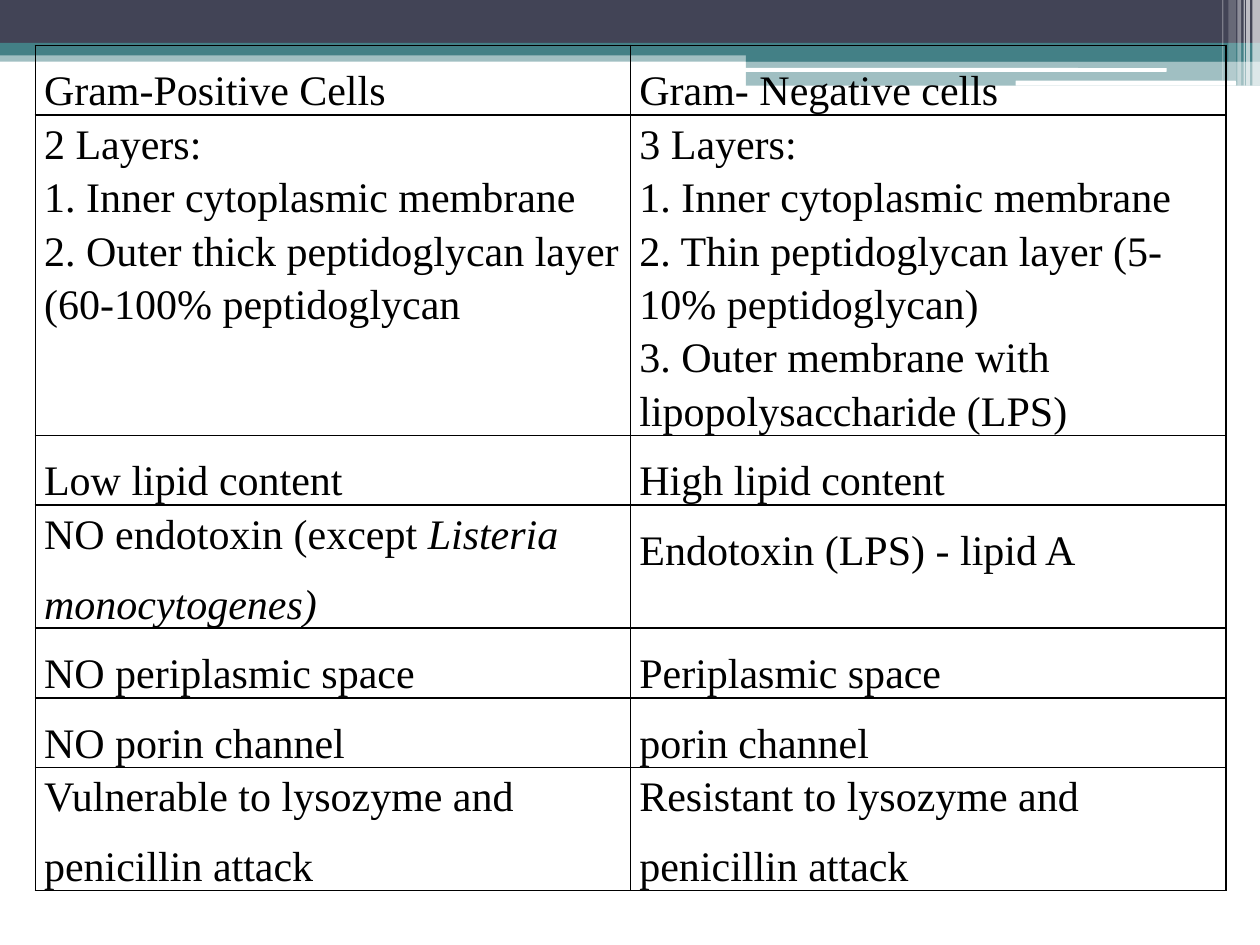
from dataclasses import dataclass

from lxml import etree
from pptx import Presentation
from pptx.dml.color import RGBColor
from pptx.enum.shapes import MSO_SHAPE
from pptx.enum.text import PP_ALIGN
from pptx.oxml.ns import qn
from pptx.util import Inches, Pt

RECTANGLE = MSO_SHAPE.RECTANGLE
ROUNDED = MSO_SHAPE.ROUNDED_RECTANGLE
JUSTIFY = PP_ALIGN.JUSTIFY


@dataclass(frozen=True)
class Theme:
    navy: str = "424456"
    teal: str = "438086"
    white: str = "FFFFFF"
    ink: str = "000000"
    font: str = "Times New Roman"
    text_size: int = 24
    border_width: int = 1
    tight: float = 1.15
    loose: float = 1.5


THEME = Theme()

BANDS = [
    (0, 0.4, 10, 0.09, THEME.teal, 50),
    (0, 0, 10, 0.34, THEME.navy, 100),
    (0, 0.34, 10, 0.1, THEME.teal, 100),
    (5.92, 0.39, 4.08, 0.1, THEME.teal, 100),
    (5.92, 0.48, 4.08, 0.2, THEME.teal, 50),
]
HIGHLIGHTS = [(5.91, 0.54, 3.35, 0.03), (8.06, 0.64, 1.75, 0.04)]
STRIPES = [
    (9.94, 0.06, 0.68, 65),
    (9.89, 0.03, 0.68, 65),
    (9.87, 0.01, 0.68, 60),
    (9.82, 0.03, 0.68, 40),
    (9.75, 0.06, 0.64, 20),
    (9.7, 0.01, 0.64, 30),
]

ROW_HEIGHTS = [0.47, 1.44, 0.47, 0.83, 0.47, 0.47, 0.83]
# Each cell holds its tight lines, then its loose last line; asterisks switch italics.
ROWS = [
    [([], "Gram-Positive Cells"), ([], "Gram- Negative cells ")],
    [
        (["2 Layers:", "1. Inner cytoplasmic membrane",
          "2. Outer thick peptidoglycan layer (60-100% peptidoglycan"], None),
        (["3 Layers:", "1. Inner cytoplasmic membrane",
          "2. Thin peptidoglycan layer (5- 10% peptidoglycan)",
          "3. Outer membrane with lipopolysaccharide (LPS)"], None),
    ],
    [([], "Low lipid content"), ([], "High lipid content")],
    [
        (["NO endotoxin (except *Listeria"], "*monocytogenes)"),
        ([], "Endotoxin (LPS) - lipid A"),
    ],
    [([], "NO periplasmic space"), ([], "Periplasmic space")],
    [([], "NO porin channel"), ([], "porin channel")],
    [
        (["Vulnerable to lysozyme and"], "penicillin attack"),
        (["Resistant to lysozyme and"], "penicillin attack"),
    ],
]


def add_block(page, kind, left, top, width, height, color, opacity=100):
    block = page.shapes.add_shape(
        kind, Inches(left), Inches(top), Inches(width), Inches(height))
    block.shadow.inherit = False
    block.line.fill.background()
    block.fill.solid()
    block.fill.fore_color.rgb = RGBColor.from_string(color)
    if opacity < 100:
        tint = block.fill._xPr.find(qn("a:solidFill"))[0]
        etree.SubElement(tint, qn("a:alpha"), val=str(opacity * 1000))


def add_header(page, left, top):
    for x, y, width, height, color, opacity in BANDS:
        add_block(page, RECTANGLE, left + x, top + y, width, height, color, opacity)
    for x, y, width, height in HIGHLIGHTS:
        add_block(page, ROUNDED, left + x, top + y, width, height, THEME.white)
    for x, width, height, opacity in STRIPES:
        add_block(page, RECTANGLE, left + x, top, width, height, THEME.white, opacity)


def set_borders(cell):
    properties = cell._tc.get_or_add_tcPr()
    for position, side in enumerate(("a:lnL", "a:lnR", "a:lnT", "a:lnB")):
        line = etree.Element(qn(side), w=str(Pt(THEME.border_width)))
        fill = etree.SubElement(line, qn("a:solidFill"))
        etree.SubElement(fill, qn("a:srgbClr"), val=THEME.ink)
        properties.insert(position, line)


def write_line(para, text, spacing):
    for index, piece in enumerate(text.split("*")):
        if piece:
            span = para.add_run()
            span.text = piece
            if index % 2:
                span.font.italic = True
    para.line_spacing = spacing
    if spacing == THEME.loose:
        para.alignment = JUSTIFY
    para.font.name = THEME.font
    para.font.size = Pt(THEME.text_size)
    para.font.color.rgb = RGBColor.from_string(THEME.ink)


def fill_cell(cell, tight_lines, loose_line):
    cell.margin_left = cell.margin_right = Inches(0.07)
    cell.margin_top = cell.margin_bottom = 0
    cell.fill.background()
    set_borders(cell)
    lines = [(text, THEME.tight) for text in tight_lines]
    if loose_line:
        lines.append((loose_line, THEME.loose))
    frame = cell.text_frame
    for index, (text, spacing) in enumerate(lines):
        para = frame.add_paragraph() if index else frame.paragraphs[0]
        write_line(para, text, spacing)


def add_comparison(page, left, top, width):
    table = page.shapes.add_table(
        len(ROWS), len(ROWS[0]), Inches(left), Inches(top),
        Inches(width), Inches(sum(ROW_HEIGHTS))).table
    table.first_row = False
    table.horz_banding = False
    for row, height, contents in zip(table.rows, ROW_HEIGHTS, ROWS):
        row.height = Inches(height)
        for cell, (tight_lines, loose_line) in zip(row.cells, contents):
            fill_cell(cell, tight_lines, loose_line)


def main():
    deck = Presentation()
    deck.slide_width = Inches(10)
    deck.slide_height = Inches(7.5)
    page = deck.slides.add_slide(deck.slide_layouts[6])
    add_header(page, 0, 0)
    add_comparison(page, 0.28, 0.36, 9.45)
    deck.save("out.pptx")


if __name__ == "__main__":
    main()
